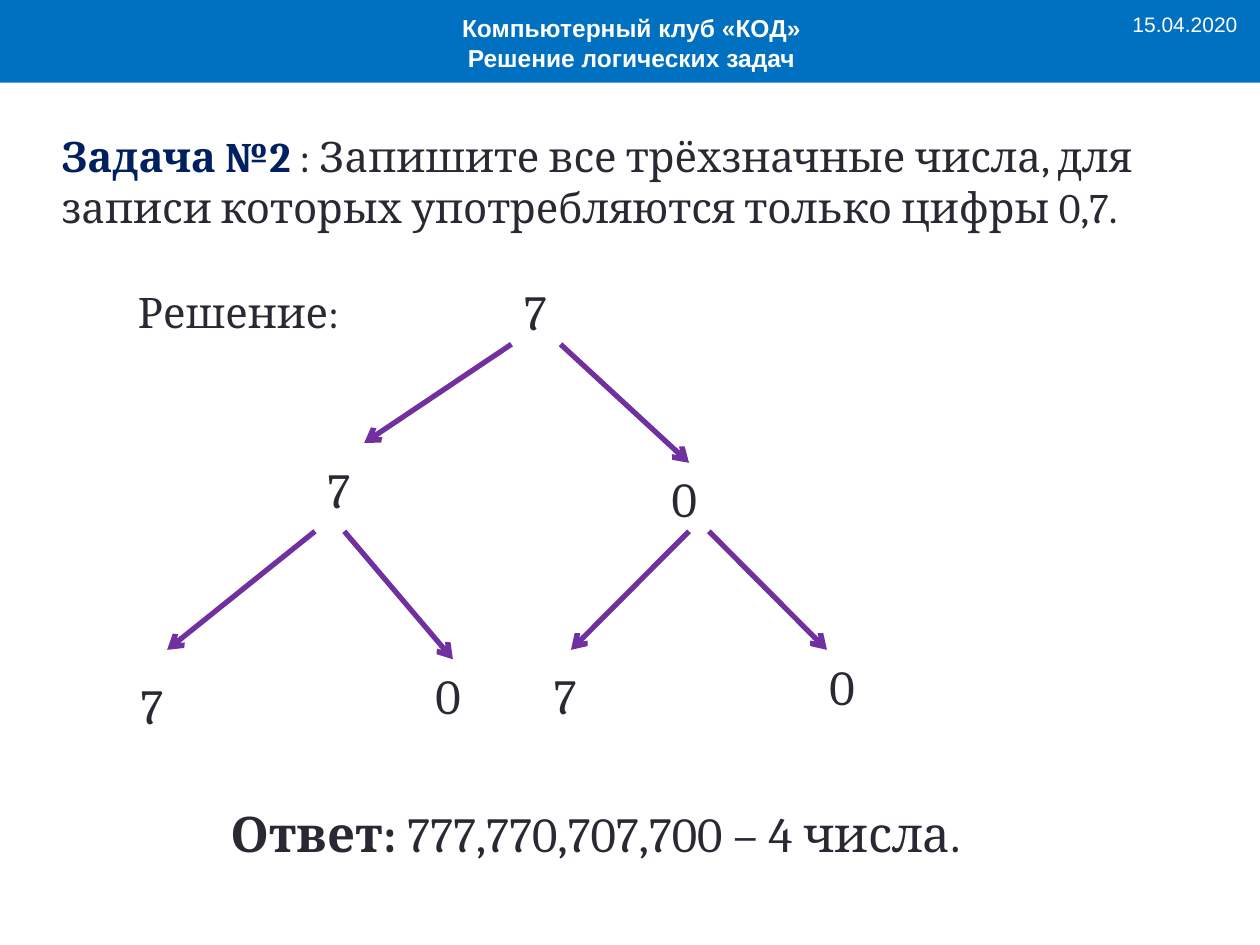
from dataclasses import dataclass

from lxml.etree import SubElement
from pptx import Presentation
from pptx.dml.color import RGBColor
from pptx.enum.shapes import MSO_CONNECTOR, MSO_SHAPE
from pptx.enum.text import MSO_ANCHOR, PP_ALIGN
from pptx.oxml.ns import qn
from pptx.util import Cm, Pt


@dataclass(frozen=True)
class Theme:
    banner: str = "0070C0"
    ink: str = "292934"
    heading: str = "002060"
    light: str = "FFFFFF"
    arrow: str = "7030A0"
    body_font: str = "Cambria"
    banner_font: str = "Arial"
    date_size: int = 12
    title_size: int = 14
    gap_size: int = 18
    body_size: int = 24
    digit_size: int = 28
    arrow_width: int = 3


THEME = Theme()

# Content: all lengths in centimetres
BANNER_HEIGHT = 1.67
TITLE = "Компьютерный клуб «КОД»\vРешение логических задач"
DATE = "15.04.2020"
TASK = [
    ("Задача №2", {"bold": True, "color": THEME.heading}),
    (" ", {"name": THEME.banner_font, "size": THEME.gap_size}),
    (": Запишите все трёхзначные числа, для записи которых "
     "употребляются только цифры 0,7.", {}),
]
SOLUTION = "Решение:"
ANSWER = [("Ответ: ", {"bold": True}), ("777,770,707,700 – 4 числа.", {})]

# Digit tree: digit, left, top
DIGIT_BOX = (1.2, 1.45)
DIGITS = [
    ("7", 10.31, 5.56),
    ("7", 6.35, 9.13), ("0", 13.29, 9.33),
    ("7", 2.58, 13.49), ("0", 8.53, 13.29),
    ("7", 10.91, 13.29), ("0", 16.47, 13.1),
]
# Branches of each level: start height, then (start x, end x, end height)
BRANCHES = {
    6.94: [(10.31, 7.34, 8.93), (11.3, 13.89, 9.33)],
    10.71: [(6.35, 3.37, 13.1), (6.94, 9.13, 13.29),
            (13.89, 11.51, 13.1), (14.29, 16.67, 13.1)],
}


def style_font(font, name=None, size=None, color=None, bold=None):
    if name:
        font.name = name
    if size:
        font.size = Pt(size)
    if color:
        font.color.rgb = RGBColor.from_string(color)
    if bold is not None:
        font.bold = bold


def add_text(slide, box, content, size=THEME.body_size, name=THEME.body_font,
             color=THEME.ink, bold=False, align=PP_ALIGN.LEFT,
             anchor=MSO_ANCHOR.TOP):
    shape = slide.shapes.add_textbox(*map(Cm, box))
    frame = shape.text_frame
    frame.word_wrap = True
    frame.vertical_anchor = anchor
    paragraph = frame.paragraphs[0]
    paragraph.alignment = align
    style_font(paragraph.font, name, size, color, bold)
    if isinstance(content, str):
        paragraph.text = content
        return
    for text, changes in content:
        run = paragraph.add_run()
        run.text = text
        style_font(run.font, **changes)


def add_arrow(slide, start, end):
    arrow = slide.shapes.add_connector(
        MSO_CONNECTOR.STRAIGHT, *map(Cm, start + end))
    arrow.line.color.rgb = RGBColor.from_string(THEME.arrow)
    arrow.line.width = Pt(THEME.arrow_width)
    SubElement(arrow.line._get_or_add_ln(), qn("a:tailEnd"), type="arrow")
    SubElement(arrow._element.spPr, qn("a:effectLst"))


def main():
    presentation = Presentation()
    presentation.slide_width = Cm(25.4)
    presentation.slide_height = Cm(19.05)
    slide = presentation.slides.add_slide(presentation.slide_layouts[6])

    # Banner with title and date
    banner = slide.shapes.add_shape(
        MSO_SHAPE.RECTANGLE, 0, 0, presentation.slide_width, Cm(BANNER_HEIGHT))
    banner.shadow.inherit = False
    banner.fill.solid()
    banner.fill.fore_color.rgb = RGBColor.from_string(THEME.banner)
    banner.line.fill.background()
    banner_style = {"name": THEME.banner_font, "color": THEME.light,
                    "anchor": MSO_ANCHOR.MIDDLE}
    add_text(slide, (4.5, 0.05, 16.46, 1.63), TITLE, THEME.title_size,
             bold=True, align=PP_ALIGN.CENTER, **banner_style)
    add_text(slide, (22.58, 0.03, 2.82, 0.91), DATE, THEME.date_size,
             **banner_style)

    # Task and solution heading
    add_text(slide, (0.99, 2.51, 23.83, 2.31), TASK)
    add_text(slide, (2.08, 5.66, 5.46, 2.06), SOLUTION, align=PP_ALIGN.CENTER)

    # Digit tree
    for digit, left, top in DIGITS:
        add_text(slide, (left, top, *DIGIT_BOX), digit, THEME.digit_size)
    for start_y, branches in BRANCHES.items():
        for start_x, end_x, end_y in branches:
            add_arrow(slide, (start_x, start_y), (end_x, end_y))

    # Answer
    add_text(slide, (1.78, 16.08, 20.45, 1.45), ANSWER, THEME.digit_size,
             align=PP_ALIGN.CENTER)

    presentation.save("out.pptx")


if __name__ == "__main__":
    main()
